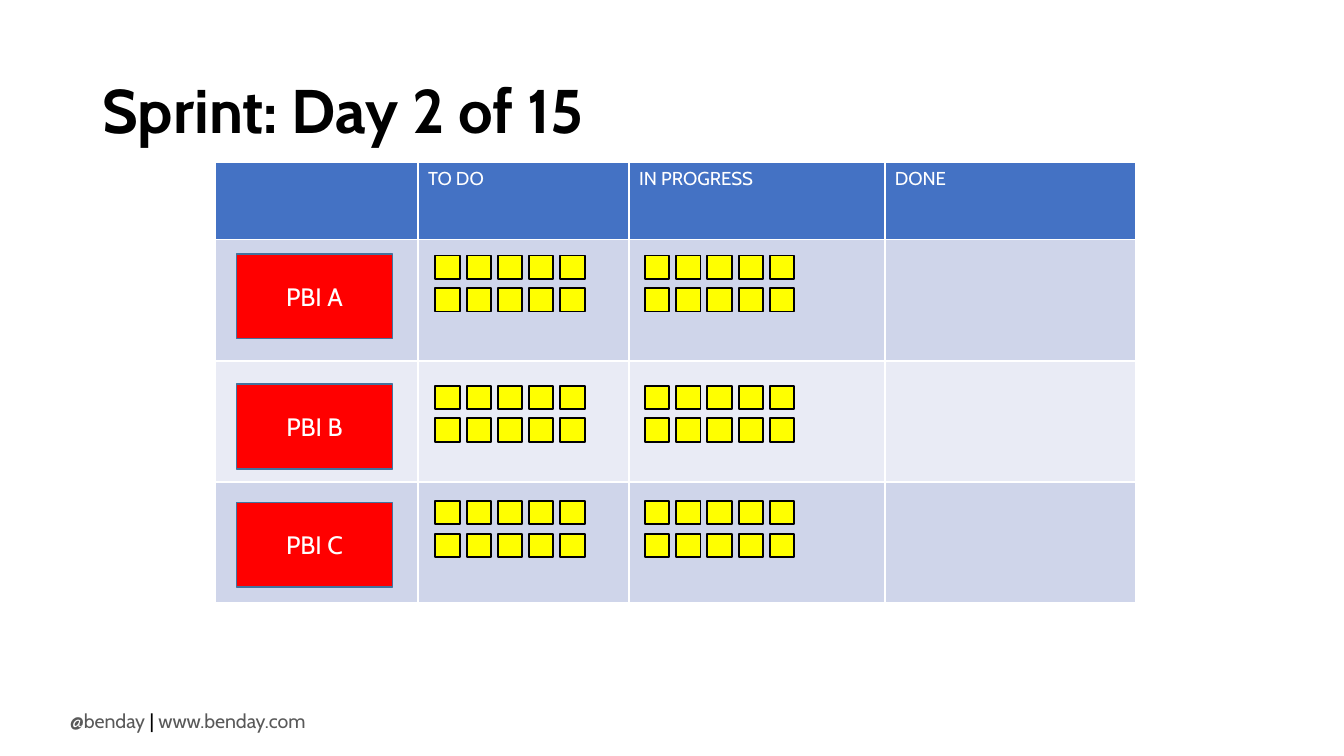
from itertools import product

from lxml.etree import SubElement
from pptx import Presentation
from pptx.dml.color import RGBColor
from pptx.enum.shapes import MSO_SHAPE as Preset
from pptx.enum.text import MSO_ANCHOR as Anchor, PP_ALIGN as Align
from pptx.oxml.ns import qn
from pptx.util import Cm, Pt

FONT = "Cabin"
COLORS = {
    "black": "000000",
    "white": "FFFFFF",
    "grey": "595959",
    "header": "4472C4",
    "odd_row": "CFD5EA",
    "even_row": "E9EBF5",
    "item": "FF0000",
    "item_edge": "43739E",
    "task": "FFFF00",
}
HEADINGS = ["", "TO DO", "IN PROGRESS", "DONE"]
COLUMN_WIDTHS = [3.84, 3.99, 4.83, 4.75]
ROW_HEIGHTS = [1.46, 2.29, 2.29, 2.29]
ROW_FILLS = ["header", "odd_row", "even_row", "odd_row"]
BACKLOG = [("PBI A", 4.8, 4.83), ("PBI B", 7.26, 7.29), ("PBI C", 9.5, 9.47)]
TASK_LEFTS = [8.23, 12.19]


def rgb(name):
    return RGBColor.from_string(COLORS[name])


def style_font(font, size, color, bold=False):
    font.name = FONT
    font.size = Pt(size)
    font.bold = bold
    font.color.rgb = rgb(color)


def add_title(slide, wording):
    title = slide.shapes.add_textbox(Cm(1.75), Cm(0.76), Cm(21.89), Cm(2.77))
    frame = title.text_frame
    frame.word_wrap = True
    frame.vertical_anchor = Anchor.MIDDLE
    frame.margin_left = frame.margin_right = Cm(0.19)
    frame.margin_top = frame.margin_bottom = Cm(0.1)
    heading = frame.paragraphs[0]
    heading.text = wording
    heading.line_spacing = 0.9
    style_font(heading.font, 33, "black", bold=True)


def add_footer(slide):
    footer = slide.shapes.add_textbox(Cm(1.07), Cm(13.28), Cm(5.28), Cm(0.71))
    footer.text_frame.word_wrap = True
    contact = footer.text_frame.paragraphs[0]
    for wording, color in [("@benday", "grey"), (" | ", "black"), ("www.benday.com", "grey")]:
        run = contact.add_run()
        run.text = wording
        run.font.color.rgb = rgb(color)
    contact.font.name = FONT
    contact.font.size = Pt(10.5)
    for run in contact.runs:
        run.font.name = FONT
        run.font.size = Pt(10.5)


def add_cell_borders(cell):
    properties = cell._tc.get_or_add_tcPr()
    for side in ("a:lnL", "a:lnR", "a:lnT", "a:lnB"):
        border = SubElement(properties, qn(side), w=str(Pt(1)))
        fill = SubElement(border, qn("a:solidFill"))
        SubElement(fill, qn("a:srgbClr"), val=COLORS["white"])


def add_board(slide):
    board = slide.shapes.add_table(
        len(ROW_HEIGHTS), len(COLUMN_WIDTHS), Cm(4.06), Cm(3.07),
        Cm(sum(COLUMN_WIDTHS)), Cm(sum(ROW_HEIGHTS)),
    ).table
    for column, width in zip(board.columns, COLUMN_WIDTHS):
        column.width = Cm(width)
    for row, height, color in zip(board.rows, ROW_HEIGHTS, ROW_FILLS):
        row.height = Cm(height)
        for cell in row.cells:
            add_cell_borders(cell)
            cell.fill.solid()
            cell.fill.fore_color.rgb = rgb(color)
            cell.margin_left = cell.margin_right = Cm(0.19)
            cell.margin_top = cell.margin_bottom = Cm(0.1)
    for cell, heading in zip(board.rows[0].cells, HEADINGS):
        cell.text = heading
        style_font(cell.text_frame.paragraphs[0].font, 10, "white")


def add_card(slide, left, top, width, height, fill, edge):
    card = slide.shapes.add_shape(Preset.RECTANGLE, Cm(left), Cm(top), Cm(width), Cm(height))
    card.shadow.inherit = False
    card.fill.solid()
    card.fill.fore_color.rgb = rgb(fill)
    card.line.color.rgb = rgb(edge)
    card.line.width = Pt(1)
    return card


def add_backlog_item(slide, wording, top):
    item = add_card(slide, 4.47, top, 2.95, 1.6, "item", "item_edge")
    item.text_frame.vertical_anchor = Anchor.MIDDLE
    label = item.text_frame.paragraphs[0]
    label.text = wording
    label.alignment = Align.CENTER
    style_font(label.font, 13.5, "white")


def add_tasks(slide, left, top):
    for row, column in product(range(2), range(5)):
        add_card(slide, left + 0.59 * column, top + 0.62 * row, 0.46, 0.44, "task", "black")


def main():
    deck = Presentation()
    deck.slide_width, deck.slide_height = Cm(25.4), Cm(14.29)
    slide = deck.slides.add_slide(deck.slide_layouts[6])
    add_footer(slide)
    add_title(slide, "Sprint: Day 2 of 15")
    add_board(slide)
    for wording, item_top, task_top in BACKLOG:
        add_backlog_item(slide, wording, item_top)
        for left in TASK_LEFTS:
            add_tasks(slide, left, task_top)
    deck.save("out.pptx")


if __name__ == "__main__":
    main()
